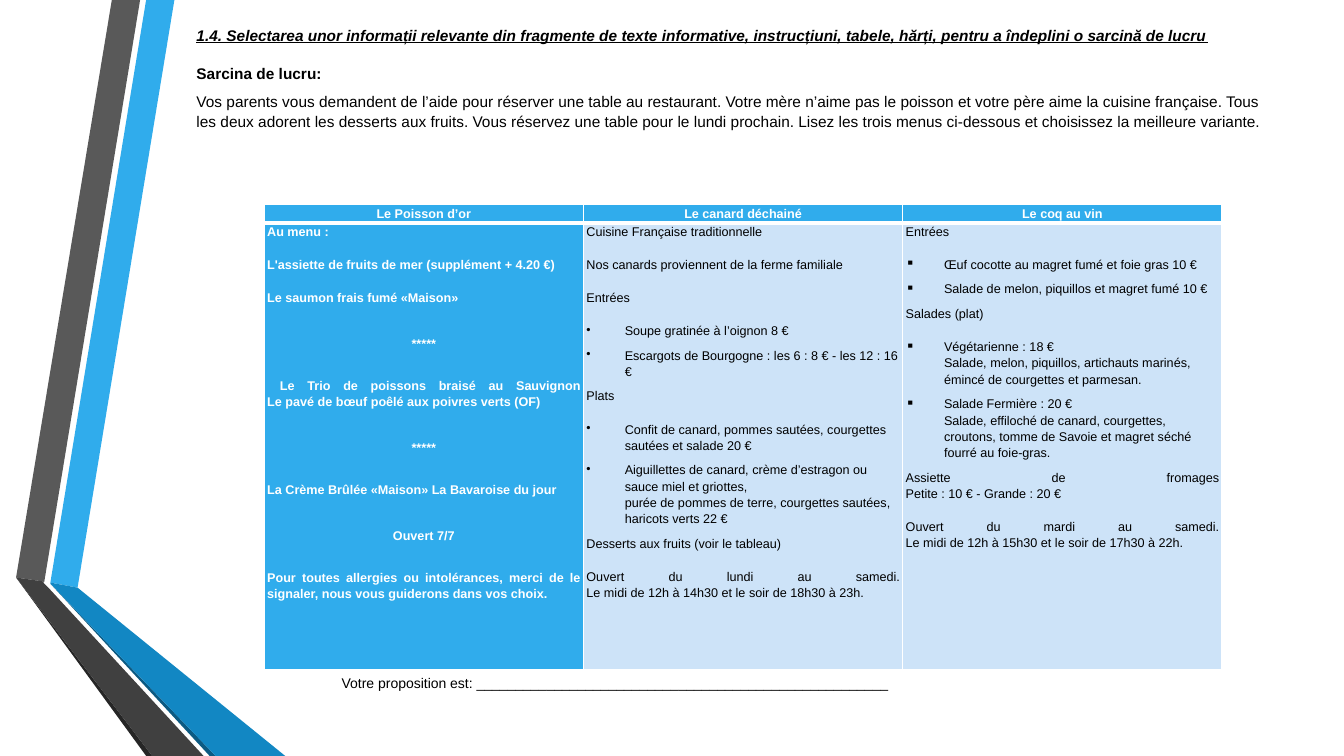
from lxml import etree
from pptx import Presentation
from pptx.dml.color import RGBColor
from pptx.enum.text import PP_ALIGN as Align
from pptx.oxml.ns import qn
from pptx.util import Inches, Pt

COLORS = {
    "white": "FFFFFF", "black": "000000", "blue": "30ACEC", "pale": "CDE3F8",
    "mid_blue": "1287C3", "deep_blue": "0C5A82",
    "grey": "595959", "dark_grey": "404040", "charcoal": "262626",
}

RIBBONS = [
    ("blue", [(0.5, 5.78), (0.77, 5.83), (1.73, 0), (1.45, 0)]),
    ("grey", [(1.39, 0), (1.11, 0), (0.16, 5.73), (0.44, 5.77)]),
    ("charcoal", [(0.16, 5.73), (1.45, 7.5), (1.51, 7.5)]),
    ("deep_blue", [(0.5, 5.79), (2.08, 7.5), (2.14, 7.5)]),
    ("mid_blue", [(0.5, 5.79), (2.14, 7.5), (2.83, 7.5), (0.77, 5.83), (0.5, 5.78)]),
    ("dark_grey", [(2.02, 7.5), (0.48, 5.83), (0.43, 5.78), (0.44, 5.77),
                   (0.16, 5.73), (1.51, 7.5)]),
]

TITLE = ("1.4. Selectarea unor informații relevante din fragmente de texte informative, "
         "instrucțiuni, tabele, hărți, pentru a îndeplini o sarcină de lucru")
TASK = ("Vos parents vous demandent de l’aide pour réserver une table au restaurant. "
        "Votre mère n’aime pas le poisson et votre père aime la cuisine française. "
        "Tous les deux adorent les desserts aux fruits. Vous réservez une table pour le "
        "lundi prochain. Lisez les trois menus ci-dessous et choisissez la meilleure variante.")

# Each menu line is (style, text); a one-character style other than these is a bullet.
BODY, CENTER = "body", "center"
MENUS = [
    ("Le Poisson d’or", "blue", "white", True, [
        (BODY, "Au menu :"),
        (BODY, "L'assiette de fruits de mer (supplément + 4.20 €)"),
        (BODY, "Le saumon frais fumé «Maison»"),
        (CENTER, "*****"),
        (BODY, " Le Trio de poissons braisé au Sauvignon\n"
               "Le pavé de bœuf poêlé aux poivres verts (OF)"),
        (CENTER, "*****"),
        (BODY, "La Crème Brûlée «Maison» La Bavaroise du jour"),
        (CENTER, "Ouvert 7/7"),
        (BODY, "Pour toutes allergies ou intolérances, merci de le signaler, "
               "nous vous guiderons dans vos choix."),
    ]),
    ("Le canard déchainé", "pale", "black", False, [
        (BODY, "Cuisine Française traditionnelle"),
        (BODY, "Nos canards proviennent de la ferme familiale"),
        (BODY, "Entrées"),
        ("•", "Soupe gratinée à l’oignon 8 €"),
        ("•", "Escargots de Bourgogne : les 6 : 8 € - les 12 : 16 €"),
        (BODY, "Plats"),
        ("•", "Confit de canard, pommes sautées, courgettes sautées et salade 20 €"),
        ("•", "Aiguillettes de canard, crème d’estragon ou sauce miel et griottes,\n"
              "purée de pommes de terre, courgettes sautées, haricots verts 22 €"),
        (BODY, "Desserts aux fruits (voir le tableau)"),
        (BODY, "Ouvert du lundi au samedi.\n"
               "Le midi de 12h à 14h30 et le soir de 18h30 à 23h."),
    ]),
    ("Le coq au vin", "pale", "black", False, [
        (BODY, "Entrées"),
        ("▪", "Œuf cocotte au magret fumé et foie gras 10 €"),
        ("▪", "Salade de melon, piquillos et magret fumé 10 €"),
        (BODY, "Salades (plat)"),
        ("▪", "Végétarienne : 18 €\nSalade, melon, piquillos, artichauts marinés, "
              "émincé de courgettes et parmesan."),
        ("▪", "Salade Fermière : 20 €\nSalade, effiloché de canard, courgettes, croutons, "
              "tomme de Savoie et magret séché fourré au foie-gras."),
        (BODY, "Assiette de fromages\nPetite : 10 € - Grande : 20 €"),
        (BODY, "Ouvert du mardi au samedi.\n"
               "Le midi de 12h à 15h30 et le soir de 17h30 à 22h."),
    ]),
]


def rgb(name):
    return RGBColor.from_string(COLORS[name])


def add_ribbon(slide, color, points):
    start, *rest = [(Inches(x), Inches(y)) for x, y in points]
    builder = slide.shapes.build_freeform(*start)
    builder.add_line_segments(rest, close=True)
    sp = builder.convert_to_shape()
    sp.shadow.inherit = False
    sp.fill.solid()
    sp.fill.fore_color.rgb = rgb(color)
    sp.line.fill.background()


def add_paragraph(tf, text, size, color="black", bold=False, align=Align.LEFT,
                  spacing=1.15, before=6, after=6):
    """Fill the first paragraph if it is still empty, otherwise append one."""
    p = tf.paragraphs[0] if not tf.text else tf.add_paragraph()
    p.text = text
    p.alignment = align
    p.line_spacing = spacing
    p.space_before, p.space_after = Pt(before), Pt(after)
    p.font.name, p.font.size, p.font.bold = "Arial", Pt(size), bold
    p.font.color.rgb = rgb(color)
    return p


def add_text_box(slide, left, top, width, height):
    tf = slide.shapes.add_textbox(*map(Inches, (left, top, width, height))).text_frame
    tf.word_wrap = True
    return tf


def set_bullet(p, char):
    pPr = p._p.get_or_add_pPr()
    pPr.set("marL", str(Inches(0.38)))
    pPr.set("indent", str(-Inches(0.38)))
    bullet = etree.Element(qn("a:buChar"), char=char)
    pPr.find(qn("a:defRPr")).addprevious(bullet)


def set_borders(cell, **widths):
    """Draw white borders; widths in points, keyed by side L, R, T, B."""
    tcPr = cell._tc.get_or_add_tcPr()
    for i, (side, width) in enumerate(widths.items()):
        ln = etree.Element(qn(f"a:ln{side}"), w=str(Pt(width)))
        fill = etree.SubElement(ln, qn("a:solidFill"))
        etree.SubElement(fill, qn("a:srgbClr"), val=COLORS["white"])
        tcPr.insert(i, ln)


def style_cell(cell, color, top, bottom):
    cell.margin_left = cell.margin_right = Inches(0.03)
    cell.margin_top = cell.margin_bottom = 0
    cell.fill.solid()
    cell.fill.fore_color.rgb = rgb(color)
    set_borders(cell, L=1, R=1, T=top, B=bottom)


def add_menu_line(tf, style, text, color, bold):
    if style == CENTER:
        add_paragraph(tf, text, 9, color, bold, Align.CENTER, 1.5, 12, 12)
    elif style == BODY:
        add_paragraph(tf, text, 9, color, bold, Align.JUSTIFY)
    else:
        set_bullet(add_paragraph(tf, text, 9, color, bold, after=0), style)


def add_menu_table(slide):
    table = slide.shapes.add_table(2, len(MENUS), Inches(2.62), Inches(2.03),
                                   Inches(9.5), Inches(4.6)).table
    table.rows[0].height, table.rows[1].height = Inches(0.18), Inches(4.43)
    for col, (name, fill, color, bold, lines) in enumerate(MENUS):
        header, menu = table.cell(0, col), table.cell(1, col)
        style_cell(header, "blue", top=1, bottom=3)
        add_paragraph(header.text_frame, name, 9, "white", True, Align.CENTER)
        style_cell(menu, fill, top=3, bottom=1)
        for style, text in lines:
            add_menu_line(menu.text_frame, style, text, color, bold)


def main():
    prs = Presentation()
    prs.slide_width, prs.slide_height = Inches(13.33), Inches(7.5)
    slide = prs.slides.add_slide(prs.slide_layouts[6])

    for color, points in RIBBONS:
        add_ribbon(slide, color, points)

    intro = add_text_box(slide, 1.85, 0.18, 10.85, 1.35)
    title = add_paragraph(intro, TITLE, 11, bold=True, align=Align.JUSTIFY)
    title.font.italic = title.font.underline = True
    add_paragraph(intro, "Sarcina de lucru:", 11, bold=True, align=Align.JUSTIFY)
    add_paragraph(intro, TASK, 11, spacing=1.07, before=0, after=0)

    add_menu_table(slide)

    answer = add_text_box(slide, 3.29, 6.64, 6.79, 0.27)
    add_paragraph(answer, "Votre proposition est: " + "_" * 53, 10,
                  spacing=1.0, before=0, after=0)
    prs.save("out.pptx")


if __name__ == "__main__":
    main()
